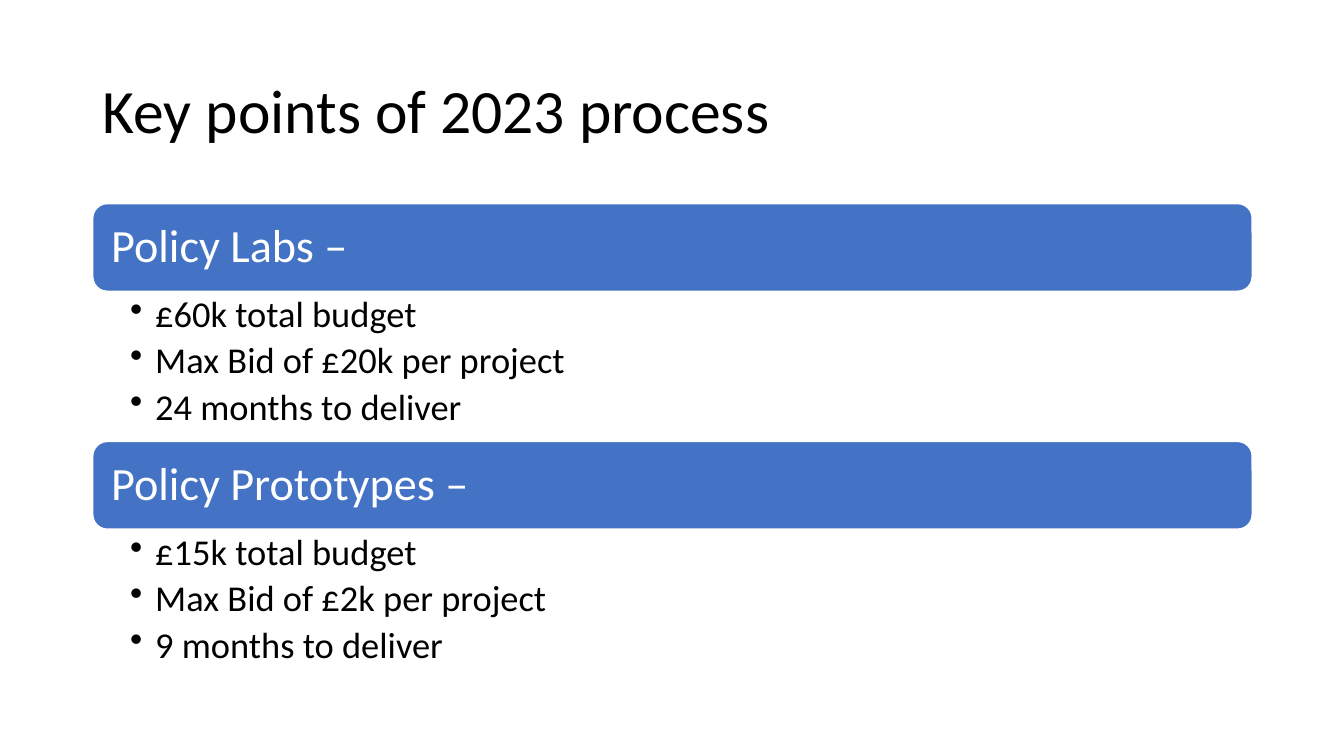
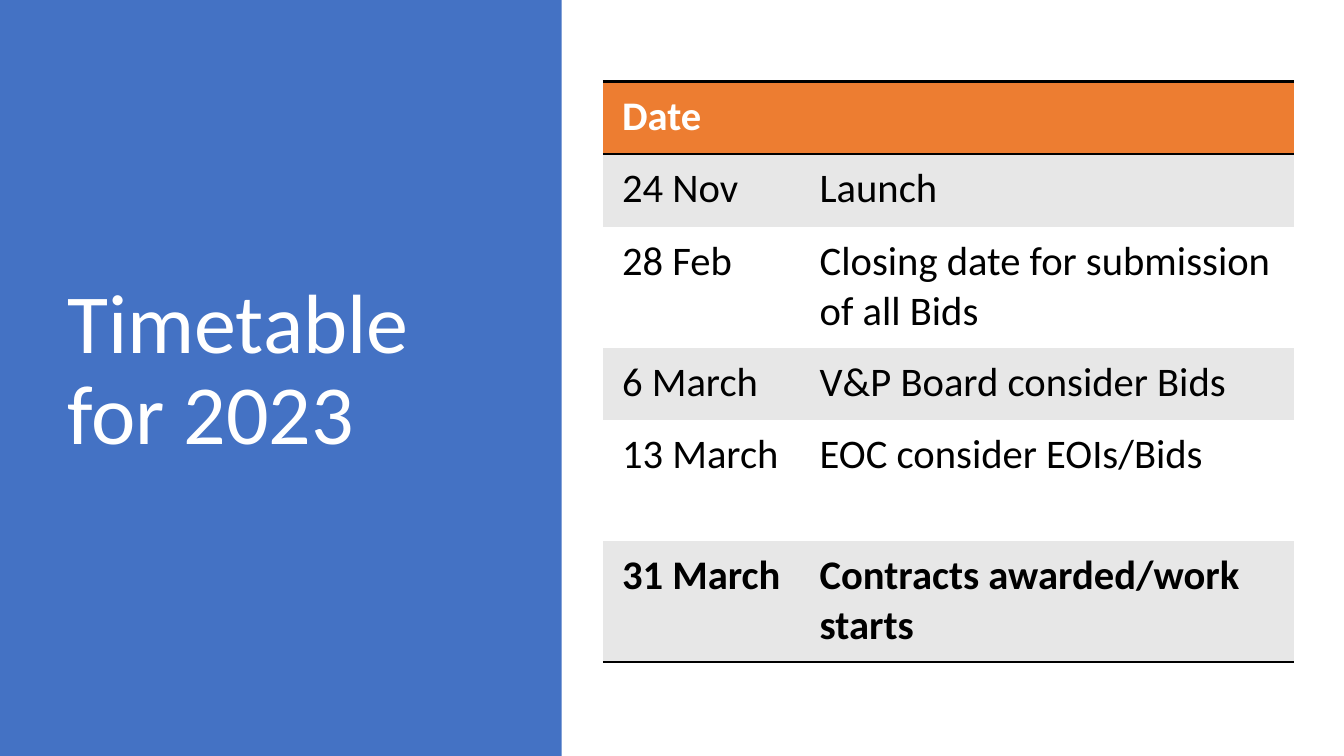
from lxml import etree
from pptx import Presentation
from pptx.dml.color import RGBColor
from pptx.enum import shapes, text
from pptx.oxml.ns import qn
from pptx.util import Inches, Pt

# Content
POINTS = [
    ("Policy Labs –",
     ["£60k total budget", "Max Bid of £20k per project", "24 months to deliver"]),
    ("Policy Prototypes –",
     ["£15k total budget", "Max Bid of £2k per project", "9 months to deliver"]),
]
DATES = [
    ("Date", ""),
    ("24 Nov", "Launch"),
    ("28 Feb", "Closing date for submission of all Bids"),
    ("6 March", "V&P Board consider Bids"),
    ("13 March", "EOC consider EOIs/Bids"),
    ("31 March", "Contracts awarded/work starts"),
]
COLS = [1.96, 4.89]
ROWS = [0.72, 0.72, 1.2, 0.72, 1.2, 1.2]

# Shared style
FONT = "Calibri"
BLUE = RGBColor(0x44, 0x72, 0xC4)
ORANGE = RGBColor(0xED, 0x7D, 0x31)
GREY = RGBColor(0xE7, 0xE7, 0xE7)
WHITE = RGBColor(0xFF, 0xFF, 0xFF)
BLACK = RGBColor(0, 0, 0)
MIDDLE = text.MSO_ANCHOR.MIDDLE


def write(frame, lines, size, color, bold=False, spacing=None):
    frame.word_wrap = True
    frame.text = "\n".join(lines)
    for para in frame.paragraphs:
        para.alignment = text.PP_ALIGN.LEFT
        para.line_spacing = spacing
        for run in para.runs:
            font = run.font
            font.name, font.size, font.bold = FONT, Pt(size), bold
            font.color.rgb = color


def inset(part, left, top, right, bottom):
    part.margin_left, part.margin_top = Inches(left), Inches(top)
    part.margin_right, part.margin_bottom = Inches(right), Inches(bottom)


def add_box(slide, left, top, width, height):
    return slide.shapes.add_textbox(
        Inches(left), Inches(top), Inches(width), Inches(height)).text_frame


def add_title(slide, place, words, size, color):
    frame = add_box(slide, *place)
    frame.vertical_anchor = MIDDLE
    write(frame, [words], size, color, spacing=0.9)


def add_band(slide, kind, left, top, width, height):
    band = slide.shapes.add_shape(
        kind, Inches(left), Inches(top), Inches(width), Inches(height))
    band.shadow.inherit = False
    band.fill.solid()
    band.fill.fore_color.rgb = BLUE
    band.line.fill.background()
    return band


def add_bullets(frame):
    for para in frame.paragraphs:
        para.space_after = Pt(5)
        props = para._p.get_or_add_pPr()
        props.set("marL", str(Inches(0.25)))
        props.set("indent", str(Inches(-0.25)))
        etree.SubElement(props, qn("a:buChar")).set("char", "•")


def set_edges(cell, shown):
    props = cell._tc.get_or_add_tcPr()
    for side in "LRTB":
        line = etree.SubElement(props, qn(f"a:ln{side}"))
        if side in shown:
            line.set("w", str(Pt(2)))
            fill = etree.SubElement(line, qn("a:solidFill"))
            etree.SubElement(fill, qn("a:srgbClr")).set("val", str(BLACK))
        else:
            etree.SubElement(line, qn("a:noFill"))


def build_points(slide):
    left, width, bar, step = 0.92, 11.5, 0.87, 2.36
    add_title(slide, (left, 0.4, width, 1.45), "Key points of 2023 process", 44, BLACK)
    for i, (head, items) in enumerate(POINTS):
        top = 2.02 + i * step
        band = add_band(slide, shapes.MSO_SHAPE.ROUNDED_RECTANGLE, left, top, width, bar)
        band.line.color.rgb = WHITE
        band.line.width = Pt(1)
        frame = band.text_frame
        frame.vertical_anchor = MIDDLE
        # The rounded corners add their own small inset
        inset(frame, 0.14, 0.1, 0.14, 0.1)
        write(frame, [head], 33, WHITE, spacing=0.9)

        frame = add_box(slide, left, top + bar, width, step - bar)
        inset(frame, 0.37, 0.05, 0.26, 0.05)
        write(frame, items, 26, BLACK, spacing=0.9)
        add_bullets(frame)


def build_dates(slide):
    add_band(slide, shapes.MSO_SHAPE.RECTANGLE, 0, 0, 5.57, 7.5)
    add_title(slide, (0.57, 0.68, 4.16, 6.02), "Timetable for 2023", 60, WHITE)

    table = slide.shapes.add_table(
        len(ROWS), len(COLS), Inches(5.98), Inches(0.81),
        Inches(sum(COLS)), Inches(sum(ROWS))).table
    table.first_row = table.horz_banding = False
    for col, width in zip(table.columns, COLS):
        col.width = Inches(width)
    last = len(ROWS) - 1
    for r, (height, words) in enumerate(zip(ROWS, DATES)):
        table.rows[r].height = Inches(height)
        shown = ("T" if r < 2 else "") + ("B" if r in (0, last) else "")
        shade = ORANGE if r == 0 else GREY if r % 2 else WHITE
        for c, word in enumerate(words):
            cell = table.cell(r, c)
            set_edges(cell, shown)
            cell.fill.solid()
            cell.fill.fore_color.rgb = shade
            inset(cell, 0.19, 0.1, 0.19, 0.1)
            write(cell.text_frame, [word], 29, BLACK if r else WHITE, r in (0, last))


def main():
    deck = Presentation()
    deck.slide_width, deck.slide_height = Inches(13.33), Inches(7.5)
    for build in (build_points, build_dates):
        build(deck.slides.add_slide(deck.slide_layouts[6]))
    deck.save("out.pptx")


if __name__ == "__main__":
    main()
